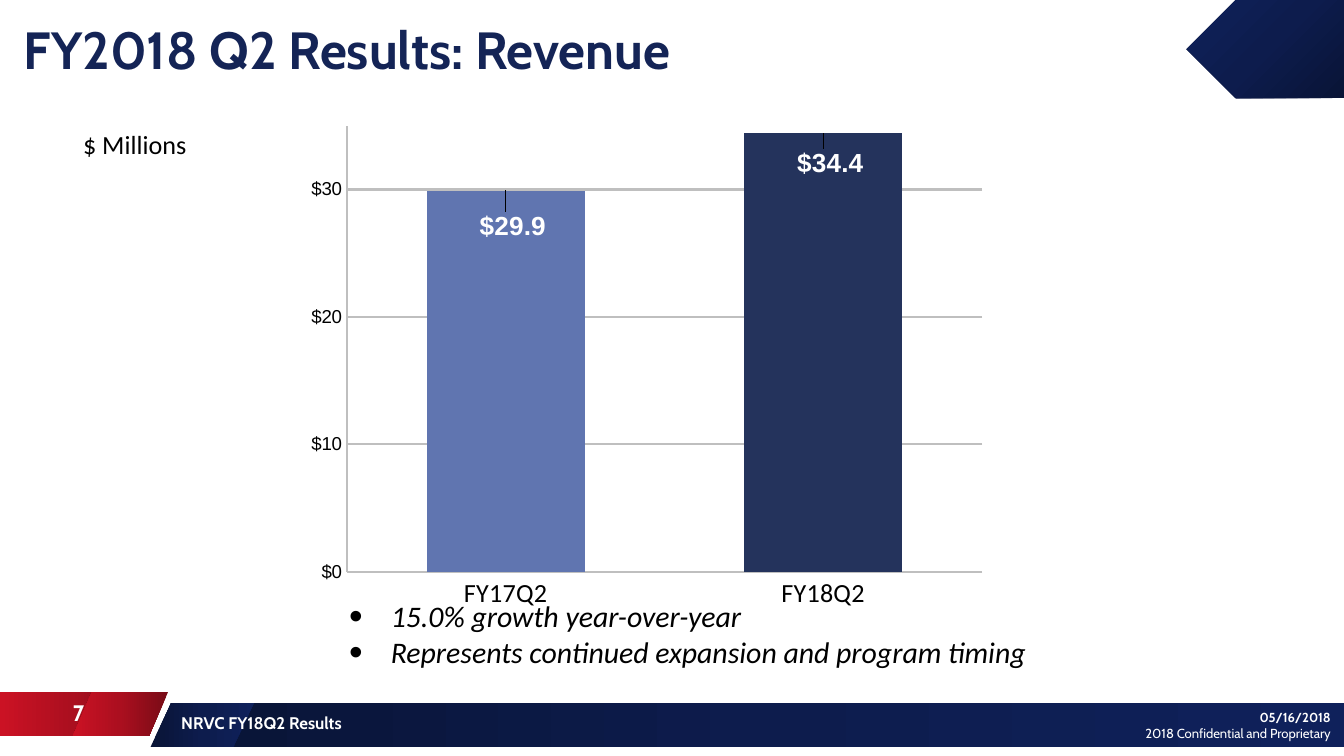
from dataclasses import dataclass

from lxml import etree
from pptx import Presentation
from pptx import util as u
from pptx.chart.data import CategoryChartData
from pptx.dml.color import RGBColor
from pptx.enum import chart as charts, shapes, text
from pptx.oxml import parse_xml
from pptx.oxml.ns import nsdecls, qn

PX = 9144  # 100 px to the inch
SLIDE_WIDTH = 1000 * PX
SLIDE_HEIGHT = SLIDE_WIDTH * 9 // 16

COLORS = {
    "white": "FFFFFF", "black": "000000", "title": "142456",
    "grid": "BFBFBF", "light_bar": "6075B0", "dark_bar": "24335C",
}
GRADIENTS = {
    "navy": ("091436", "0D1C4D", "0F215B"),
    "red": ("780B16", "AB0F1F", "CB1224"),
}
SHAPE = shapes.MSO_SHAPE
ALIGN = text.PP_ALIGN
ANCHOR = text.MSO_ANCHOR


@dataclass
class Band:
    box: tuple[int, int, int, int]
    kind: SHAPE
    gradient: str
    angle: int
    rotation: int = 0


@dataclass
class Label:
    box: tuple[int, int, int, int]
    lines: tuple[str, ...]
    size: int
    font: str = "Cabin"
    color: str = "white"
    bold_lines: int = 0
    italic: bool = False
    bullet: bool = False
    align: ALIGN = ALIGN.LEFT
    anchor: ANCHOR = ANCHOR.TOP


@dataclass
class Bar:
    category: str
    value: float
    color: str
    label_shift: tuple[float, float]


BANDS = [
    Band((883, 0, 117, 73), SHAPE.PENTAGON, "navy", 45, 180),
    Band((0, 515, 108, 33), SHAPE.RECTANGLE, "red", 180),
    Band((54, 515, 71, 33), SHAPE.FLOWCHART_DATA, "red", 180),
    Band((135, 523, 865, 33), SHAPE.RECTANGLE, "navy", 0),
    Band((112, 523, 77, 33), SHAPE.FLOWCHART_DATA, "navy", 0),
]
LABELS = [
    Label((8, 0, 867, 73), ("FY2018 Q2 Results: Revenue",), 28, color="title",
          bold_lines=1, anchor=ANCHOR.MIDDLE),
    Label((52, 91, 317, 40), ("$ Millions",), 14, "Calibri", "black"),
    Label((250, 440, 740, 64),
          ("15.0% growth year-over-year",
           "Represents continued expansion and program timing"),
          16, "Calibri", "black", italic=True, bullet=True),
    Label((0, 515, 117, 30), ("7",), 12, bold_lines=1, align=ALIGN.CENTER),
    Label((125, 523, 692, 30), ("NRVC FY18Q2 Results",), 9, bold_lines=1,
          anchor=ANCHOR.MIDDLE),
    Label((817, 523, 183, 30),
          ("05/16/2018", "2018 Confidential and Proprietary"), 7,
          bold_lines=1, align=ALIGN.RIGHT),
]
BARS = [
    Bar("FY17Q2", 29.9, "light_bar", (0.01, 0.03)),
    Bar("FY18Q2", 34.4, "dark_bar", (0.01, 0.02)),
]


def emu(box: tuple[int, ...]) -> list[int]:
    return [length * PX for length in box]


def rgb(name: str) -> RGBColor:
    return RGBColor.from_string(COLORS[name])


def style_font(font, name: str, size: int, color: str, bold: bool = False) -> None:
    font.name, font.size, font.bold = name, u.Pt(size), bold
    font.color.rgb = rgb(color)


def add_band(slide, band: Band) -> None:
    shape = slide.shapes.add_shape(band.kind, *emu(band.box))
    shape.rotation = band.rotation
    shape.shadow.inherit = False
    shape.line.fill.background()
    stops = "".join(
        f'<a:gs pos="{index * 50000}"><a:srgbClr val="{color}"/></a:gs>'
        for index, color in enumerate(GRADIENTS[band.gradient]))
    fill = parse_xml(
        f'<a:gradFill {nsdecls("a")} rotWithShape="1"><a:gsLst>{stops}</a:gsLst>'
        f'<a:lin ang="{band.angle * 60000}" scaled="0"/></a:gradFill>')
    shape._element.spPr.find(qn("a:prstGeom")).addnext(fill)


def add_bullet(paragraph) -> None:
    properties = paragraph._p.get_or_add_pPr()
    properties.set("marL", str(31 * PX))
    properties.set("indent", str(-31 * PX))
    etree.SubElement(properties, qn("a:buSzPct")).set("val", "130000")
    etree.SubElement(properties, qn("a:buFont")).set("typeface", "Arial")
    etree.SubElement(properties, qn("a:buChar")).set("char", "•")


def add_label(slide, label: Label) -> None:
    frame = slide.shapes.add_textbox(*emu(label.box)).text_frame
    frame.word_wrap = True
    frame.vertical_anchor = label.anchor
    frame.text = "\n".join(label.lines)
    for index, paragraph in enumerate(frame.paragraphs):
        paragraph.alignment = label.align
        if label.bullet:
            add_bullet(paragraph)
        font = paragraph.runs[0].font
        style_font(font, label.font, label.size, label.color,
                   index < label.bold_lines)
        font.italic = label.italic


def manual_layout(x: float, y: float, size: str = "", modes: str = ""):
    return parse_xml(
        f'<c:layout {nsdecls("c")}><c:manualLayout>{modes}'
        f'<c:x val="{x}"/><c:y val="{y}"/>{size}</c:manualLayout></c:layout>')


def hide_leader_lines(labels) -> None:
    labels._element.append(parse_xml(
        f'<c:extLst {nsdecls("c")}>'
        '<c:ext uri="{CE6537A1-D6FC-4f65-9D91-7224C49458BB}" '
        'xmlns:c15="http://schemas.microsoft.com/office/drawing/2012/chart">'
        '<c15:showLeaderLines val="0"/></c:ext></c:extLst>'))


def add_revenue_chart(slide, bars: list[Bar]) -> None:
    data = CategoryChartData(number_format='"$"#,##0.0')
    data.categories = [bar.category for bar in bars]
    data.add_series("Series 1", [bar.value for bar in bars])
    chart = slide.shapes.add_chart(
        charts.XL_CHART_TYPE.COLUMN_CLUSTERED, *emu((211, 82, 525, 386)), data).chart
    chart.has_legend = chart.has_title = False
    style_font(chart.font, "Calibri", 10, "black")

    # Plot area
    plot_area = chart._chartSpace.chart.plotArea
    for layout in plot_area.findall(qn("c:layout")):
        plot_area.remove(layout)
    plot_area.insert(0, manual_layout(
        0.09, 0.03, '<c:w val="0.9"/><c:h val="0.86"/>',
        '<c:layoutTarget val="inner"/><c:xMode val="edge"/><c:yMode val="edge"/>'))

    # Axes
    for axis, font, size in ((chart.category_axis, "Calibri", 14),
                             (chart.value_axis, "Arial", 10)):
        axis.major_tick_mark = axis.minor_tick_mark = charts.XL_TICK_MARK.NONE
        style_font(axis.tick_labels.font, font, size, "black")
    chart.category_axis.format.line.fill.background()
    values = chart.value_axis
    values.minimum_scale, values.maximum_scale, values.major_unit = 0, 35, 10
    values.tick_labels.number_format = '"$"#,##0'
    values.tick_labels.number_format_is_linked = False
    values.has_major_gridlines = True
    for line, width in ((values.format.line, 0.75),
                        (values.major_gridlines.format.line, 1.25)):
        line.color.rgb = rgb("grid")
        line.width = u.Pt(width)

    # Bars and their labels
    plot = chart.plots[0]
    plot.gap_width, plot.vary_by_categories = 101, False
    series = plot.series[0]
    labels = series.data_labels
    labels.show_value = True
    labels.number_format = '"$"#,##0.0'
    labels.number_format_is_linked = False
    for index, bar in enumerate(bars):
        point = series.points[index]
        point.format.fill.solid()
        point.format.fill.fore_color.rgb = rgb(bar.color)
        style_font(point.data_label.font, "Arial", 14, "white", True)
        point.data_label.position = charts.XL_LABEL_POSITION.INSIDE_END
        element = labels._element.findall(qn("c:dLbl"))[index]
        element.find(qn("c:idx")).addnext(manual_layout(*bar.label_shift))
    hide_leader_lines(labels)


def main() -> None:
    presentation = Presentation()
    presentation.slide_width = SLIDE_WIDTH
    presentation.slide_height = SLIDE_HEIGHT
    slide = presentation.slides.add_slide(presentation.slide_layouts[6])
    for band in BANDS:
        add_band(slide, band)
    add_revenue_chart(slide, BARS)
    for label in LABELS:
        add_label(slide, label)
    presentation.save("out.pptx")


if __name__ == "__main__":
    main()
